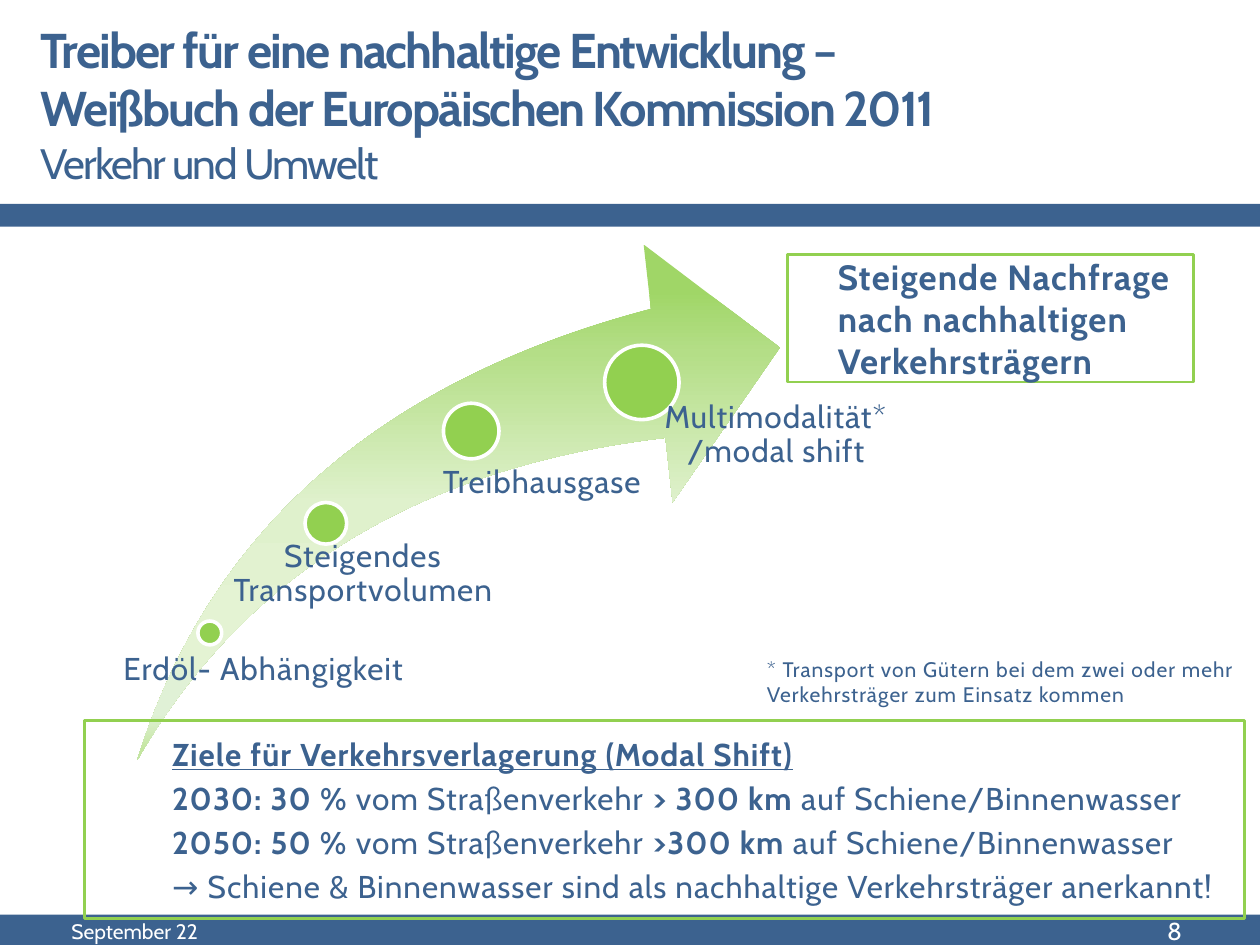
from dataclasses import dataclass

from lxml.etree import SubElement
from pptx import Presentation
from pptx.dml.color import RGBColor
from pptx.enum.shapes import MSO_SHAPE
from pptx.enum.text import MSO_ANCHOR, MSO_AUTO_SIZE, PP_ALIGN
from pptx.oxml.ns import qn
from pptx.util import Cm, Pt

BLUE = RGBColor(0x3C, 0x62, 0x8F)
GREEN = RGBColor(0x92, 0xD0, 0x50)
WHITE = RGBColor(0xFF, 0xFF, 0xFF)
FADE = [  # arrow gradient: percent, colour
    (9, RGBColor(0xA0, 0xD6, 0x67)),
    (21, RGBColor(0xB4, 0xDE, 0x87)),
    (50, RGBColor(0xDF, 0xF1, 0xCC)),
    (74, RGBColor(0xE4, 0xF3, 0xD3)),
    (91, RGBColor(0xE0, 0xF1, 0xD6)),
    (98, RGBColor(0xC4, 0xE6, 0xA0)),
]
FONT = "Cabin"
Box = tuple[float, float, float, float]  # left, top, width, height in cm
Runs = list[tuple[str, bool]]  # text, bold


@dataclass
class Driver:
    text: str
    dot: tuple[float, float, float]  # left, top, diameter
    box: Box
    inset: float
    align: PP_ALIGN = PP_ALIGN.CENTER


DRIVERS = [
    Driver("Erdöl- Abhängigkeit", (3.99, 12.52, 0.48),
           (2.24, 13.16, 7.9, 3.15), 0.25, PP_ALIGN.LEFT),
    Driver("Steigendes Transportvolumen", (6.15, 10.13, 0.84),
           (3.84, 10.9, 6.5, 6.07), 0.46),
    Driver("Treibhausgase", (8.94, 8.13, 1.12),
           (7.75, 9.4, 5.77, 8.2), 0.58),
    Driver("Multimodalität*\v/modal shift", (12.19, 6.96, 1.5),
           (12.19, 8.08, 6.12, 9.53), 0.79),
]
GOALS: list[Runs] = [
    [("Ziele für Verkehrsverlagerung (Modal Shift)", True)],
    [("2030: 30 % ", True), ("vom Straßenverkehr ", False),
     ("> 300 km ", True), ("auf Schiene/Binnenwasser", False)],
    [("2050: 50 % ", True), ("vom Straßenverkehr ", False),
     (">300 km ", True), ("auf Schiene/Binnenwasser", False)],
    [("→ Schiene & Binnenwasser sind als nachhaltige "
      "Verkehrsträger anerkannt!", False)],
]


def style(para, size: float, color=BLUE, bold=False, gap=0.6,
          align=PP_ALIGN.LEFT) -> None:
    para.alignment = align
    font = para.font
    font.name, font.size, font.bold = FONT, Pt(size), bold
    font.color.rgb = color
    if gap:
        font._rPr.set("spc", str(round(gap * 100)))


def indent(para, left: float) -> None:
    props = para._p.get_or_add_pPr()
    props.set("marL", str(Cm(left)))
    props.set("indent", "0")


def shape(slide, kind, box: Box, fill=None, line=None, width=1.5):
    item = slide.shapes.add_shape(kind, *map(Cm, box))
    item.shadow.inherit = False
    if fill is None:
        item.fill.background()
    else:
        item.fill.solid()
        item.fill.fore_color.rgb = fill
    if line is None:
        item.line.fill.background()
    else:
        item.line.color.rgb = line
        item.line.width = Pt(width)
    return item


def frame(item, anchor=MSO_ANCHOR.MIDDLE):
    text = item.text_frame
    text.word_wrap = True
    text.auto_size = MSO_AUTO_SIZE.NONE
    text.vertical_anchor = anchor
    return text


def label(slide, box: Box, words: str, anchor=MSO_ANCHOR.MIDDLE, **look):
    text = frame(slide.shapes.add_textbox(*map(Cm, box)), anchor)
    para = text.paragraphs[0]
    para.text = words
    style(para, **look)
    return text


def arrow(slide, box: Box) -> None:
    item = shape(slide, MSO_SHAPE.SWOOSH_ARROW, box)
    item.adjustments[0] = item.adjustments[1] = 0.25
    item.fill.gradient()
    item.fill.gradient_angle = 270
    stops = item._element.spPr.find(".//" + qn("a:gsLst"))
    for old in list(stops):
        stops.remove(old)
    for pos, color in FADE:
        stop = SubElement(stops, qn("a:gs"), pos=str(pos * 1000))
        SubElement(stop, qn("a:srgbClr"), val=str(color))


def driver(slide, item: Driver) -> None:
    left, top, size = item.dot
    shape(slide, MSO_SHAPE.OVAL, (left, top, size, size), GREEN, WHITE, 2.08)
    text = label(slide, item.box, item.text, MSO_ANCHOR.TOP,
                 size=18, align=item.align)
    text.margin_left = Cm(item.inset)
    text.margin_top = text.margin_right = text.margin_bottom = 0
    text.paragraphs[0].line_spacing = 0.9


def heading(slide) -> None:
    title = slide.shapes.title
    title.left, title.top, title.width, title.height = map(
        Cm, (0.56, 1.24, 23.6, 2.74))
    text = frame(title)
    text.margin_bottom = Cm(1.17)
    para = text.paragraphs[0]
    para.text = ("Treiber für eine nachhaltige Entwicklung –\v"
                 "Weißbuch der Europäischen Kommission 2011")
    style(para, 27.9, bold=True, gap=-1)
    para.add_line_break()
    run = para.add_run()
    run.text = "Verkehr und Umwelt"
    run.font.size, run.font.bold = Pt(24.3), False


def goals(slide) -> None:
    box = shape(slide, MSO_SHAPE.RECTANGLE, (1.7, 14.53, 23.39, 3.99),
                line=GREEN)
    text = frame(box)
    for i, runs in enumerate(GOALS):
        para = text.add_paragraph() if i else text.paragraphs[0]
        indent(para, 1.52)
        if i:
            para.space_before = Pt(3.6)
        style(para, 18)
        para.font.underline = i == 0
        for words, bold in runs:
            run = para.add_run()
            run.text, run.font.bold = words, bold


def main() -> None:
    deck = Presentation()
    deck.slide_width, deck.slide_height = Cm(25.4), Cm(19.05)
    slide = deck.slides.add_slide(deck.slide_layouts[5])

    # Bars and title
    for top, high in ((18.44, 0.61), (4.11, 0.46)):
        shape(slide, MSO_SHAPE.RECTANGLE, (0, top, 25.4, high), BLUE)
    heading(slide)

    # Arrow with its drivers
    arrow(slide, (2.77, 4.93, 12.95, 10.39))
    for item in DRIVERS:
        driver(slide, item)

    # Outcome and footnote
    box = shape(slide, MSO_SHAPE.RECTANGLE, (15.88, 5.13, 8.18, 2.57),
                line=GREEN)
    para = frame(box).paragraphs[0]
    para.text = "Steigende Nachfrage nach nachhaltigen Verkehrsträgern"
    indent(para, 0.76)
    style(para, 20, bold=True)
    label(slide, (15.21, 12.75, 10.11, 1.98),
          "* Transport von Gütern bei dem zwei oder mehr "
          "Verkehrsträger zum Einsatz kommen", size=12)

    # Footer and goals
    label(slide, (1.19, 18.31, 8.05, 0.91), "September 22",
          size=12, color=WHITE, gap=0)
    label(slide, (21.11, 18.31, 2.97, 0.91), "8",
          size=14, color=WHITE, gap=0, align=PP_ALIGN.RIGHT)
    goals(slide)
    deck.save("out.pptx")


if __name__ == "__main__":
    main()
